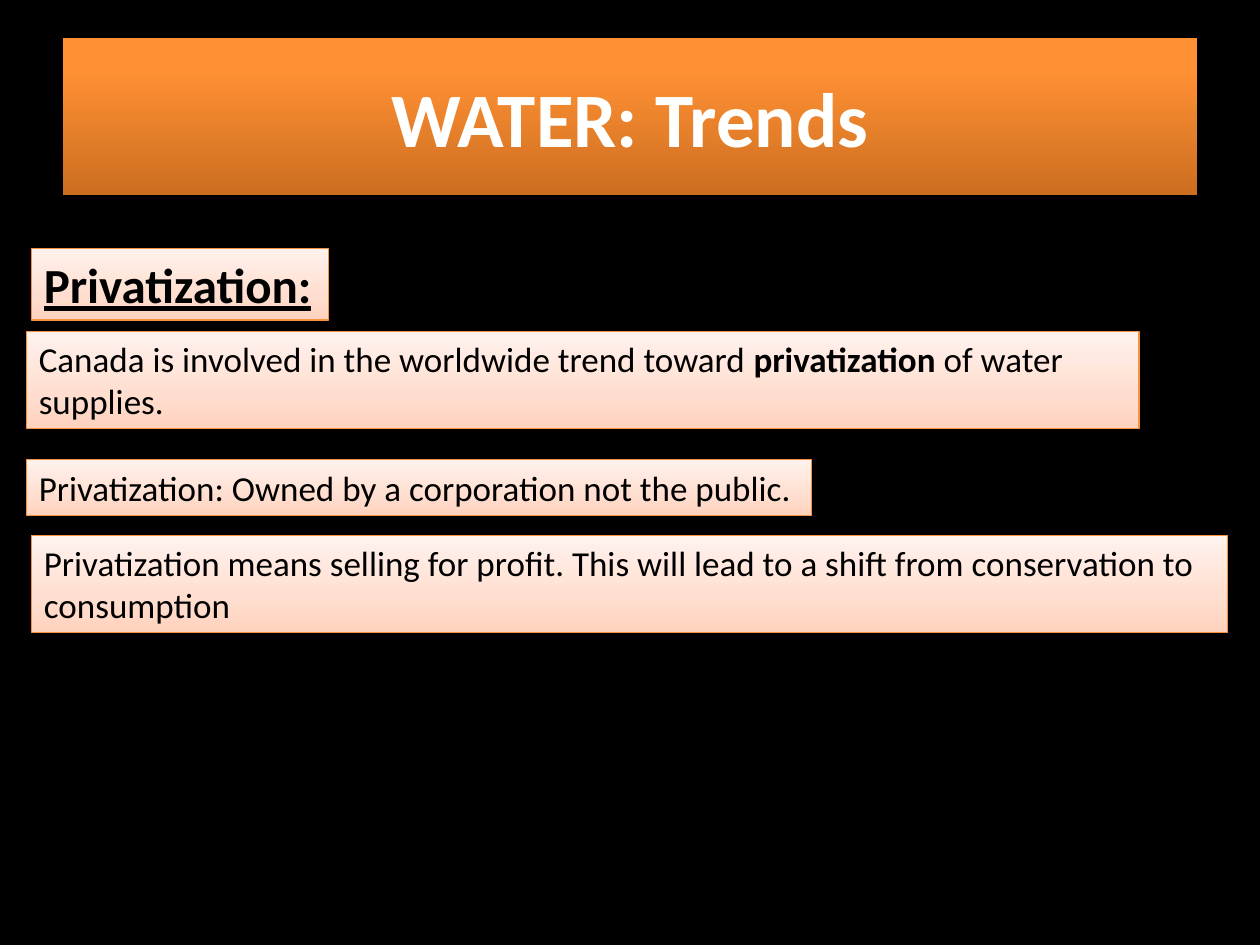
from pptx import Presentation
from pptx.dml.color import RGBColor
from pptx.enum.shapes import MSO_SHAPE
from pptx.enum.text import MSO_ANCHOR, MSO_AUTO_SIZE, PP_ALIGN
from pptx.oxml import parse_xml
from pptx.oxml.ns import nsdecls
from pptx.util import Pt

RECT = MSO_SHAPE.RECTANGLE
LEFT, CENTER = PP_ALIGN.LEFT, PP_ALIGN.CENTER
TOP, MIDDLE = MSO_ANCHOR.TOP, MSO_ANCHOR.MIDDLE
GROW = MSO_AUTO_SIZE.SHAPE_TO_FIT_TEXT

FONT = "Calibri"
BLACK, WHITE, ORANGE = "000000", "FFFFFF", "F69240"
PEACH = [(0, "FFD2BD"), (35, "FFDED0"), (100, "FFF2ED")]
AMBER = [(0, "CC6E20"), (80, "FF9034"), (100, "FF9136")]

TITLE = [["WATER: Trends"]]
HEADING = [["Privatization:"]]
NOTES = [
    ((15.12, 189.36, 635.76, 55.44), True,
     [["Canada is involved in the worldwide trend toward ", ("privatization ",), "of water supplies."]]),
    ((15.12, 262.8, 448.56, 31.68), False,
     [["Privatization: Owned by a corporation not the public."]]),
    ((18, 306, 683.28, 55.44), False,
     [["Privatization means selling for profit. This will lead to a shift from conservation to"],
      ["consumption"]]),
]


def rgb(color):
    return RGBColor.from_string(color)


def add_panel(slide, box, stops, line=None):
    sp = slide.shapes.add_shape(RECT, *map(Pt, box))
    sp.shadow.inherit = False
    gs = "".join(f'<a:gs pos="{pos * 1000}"><a:srgbClr val="{color}"/></a:gs>' for pos, color in stops)
    sp._element.spPr.insert(2, parse_xml(
        f'<a:gradFill {nsdecls("a")} rotWithShape="1"><a:gsLst>{gs}</a:gsLst>'
        '<a:lin ang="16200000" scaled="0"/></a:gradFill>'))
    if line:
        sp.line.color.rgb = rgb(line)
        sp.line.width = Pt(0.75)
    else:
        sp.line.fill.background()
    return sp


def add_text(sp, paragraphs, size=20, color=BLACK, bold=False, underline=False,
             align=LEFT, anchor=TOP, wrap=False, grow=True):
    tf = sp.text_frame
    tf.word_wrap = wrap
    tf.vertical_anchor = anchor
    if grow:
        tf.auto_size = GROW
    for i, runs in enumerate(paragraphs):
        p = tf.add_paragraph() if i else tf.paragraphs[0]
        p.alignment = align
        for run in runs:
            strong = isinstance(run, tuple)
            r = p.add_run()
            r.text = run[0] if strong else run
            r.font.name = FONT
            r.font.size = Pt(size)
            r.font.bold = bold or strong
            r.font.underline = underline
            r.font.color.rgb = rgb(color)


prs = Presentation()
prs.slide_width, prs.slide_height = Pt(720), Pt(540)
slide = prs.slides.add_slide(prs.slide_layouts[6])
slide.background.fill.solid()
slide.background.fill.fore_color.rgb = rgb(BLACK)

for box, wrap, paragraphs in NOTES:
    add_text(add_panel(slide, box, PEACH, ORANGE), paragraphs, wrap=wrap)

add_text(add_panel(slide, (36, 21.6, 648, 90), AMBER), TITLE, size=44, color=WHITE,
         bold=True, align=CENTER, anchor=MIDDLE, wrap=True, grow=False)
add_text(add_panel(slide, (18, 141.84, 169.92, 41.04), PEACH, ORANGE), HEADING,
         size=28, bold=True, underline=True)

prs.save("out.pptx")
